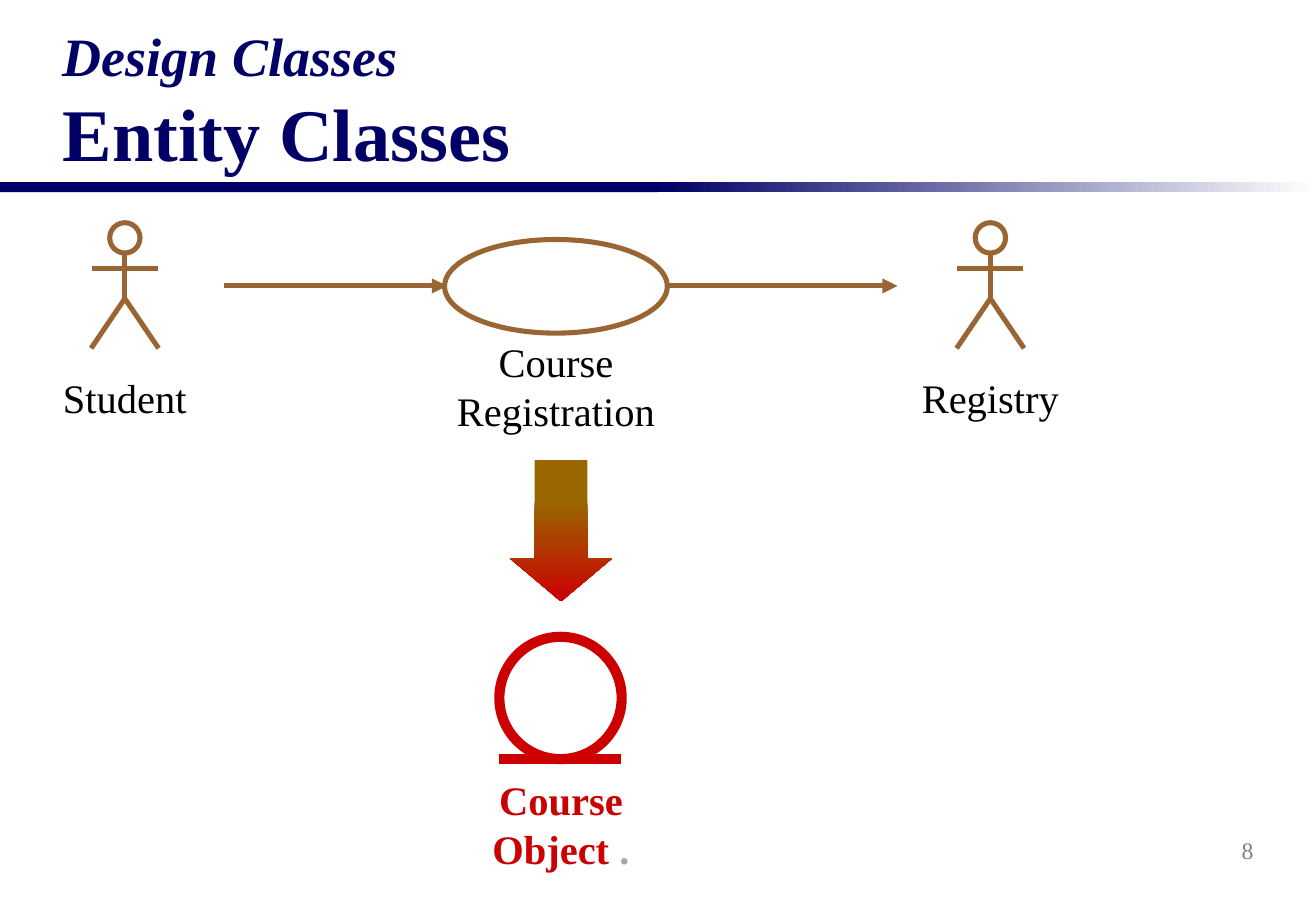
from lxml import etree
from pptx import Presentation
from pptx.dml.color import RGBColor
from pptx.enum import shapes, text
from pptx.oxml.ns import qn
from pptx.util import Pt

COLORS = {
    "navy": "000066",
    "white": "FFFFFF",
    "brown": "996633",
    "ochre": "996600",
    "red": "CC0000",
    "black": "000000",
    "gray": "808080",
    "silver": "A6A6A6",
}
FONT = "Times New Roman"


def rgb(name):
    return RGBColor.from_string(COLORS[name])


def style_run(r, size, color, bold=False, italic=False):
    r.font.name = FONT
    r.font.size = Pt(size)
    r.font.color.rgb = rgb(color)
    r.font.bold = bold
    r.font.italic = italic


def add_shape(s, kind, box, fill=None, line=None, width=3):
    sp = s.shapes.add_shape(kind, *map(Pt, box))
    sp.shadow.inherit = False
    if fill:
        sp.fill.solid()
        sp.fill.fore_color.rgb = rgb(fill)
    if line:
        sp.line.color.rgb = rgb(line)
        sp.line.width = Pt(width)
    else:
        sp.line.fill.background()
    return sp


def set_gradient(sp, stops, angle):
    sp.fill.gradient()
    sp.fill.gradient_angle = angle
    gs_list = sp.element.spPr.find(qn("a:gradFill")).find(qn("a:gsLst"))
    for gs in list(gs_list):
        gs_list.remove(gs)
    for percent, color in stops:
        gs = etree.SubElement(gs_list, qn("a:gs"), pos=str(percent * 1000))
        etree.SubElement(gs, qn("a:srgbClr"), val=COLORS[color])


def add_line(s, start, end, color="brown", width=3, arrow=False):
    c = s.shapes.add_connector(shapes.MSO_CONNECTOR.STRAIGHT, *map(Pt, start + end))
    c.line.color.rgb = rgb(color)
    c.line.width = Pt(width)
    if arrow:
        ln = c.element.spPr.find(qn("a:ln"))
        etree.SubElement(ln, qn("a:tailEnd"), type="triangle")
    etree.SubElement(c.element.spPr, qn("a:effectLst"))
    return c


def add_label(s, box, runs, size=24, bold=False, wrap=True,
              align=text.PP_ALIGN.CENTER, anchor=text.MSO_ANCHOR.TOP):
    tf = s.shapes.add_textbox(*map(Pt, box)).text_frame
    tf.word_wrap = wrap
    tf.vertical_anchor = anchor
    p = tf.paragraphs[0]
    p.alignment = align
    for words, color in runs:
        r = p.add_run()
        r.text = words
        style_run(r, size, color, bold)


def add_title(s):
    title = s.shapes.title
    title.left, title.top, title.width, title.height = map(Pt, (30, 24, 720, 84))
    tf = title.text_frame
    tf.text = "Design Classes\vEntity Classes"
    tf.word_wrap = True
    tf.auto_size = text.MSO_AUTO_SIZE.NONE
    tf.vertical_anchor = text.MSO_ANCHOR.BOTTOM
    p = tf.paragraphs[0]
    p.alignment = text.PP_ALIGN.LEFT
    style_run(p.runs[0], 32, "navy", bold=True, italic=True)
    style_run(p.runs[1], 44, "navy", bold=True)


def add_title_rule(s):
    rect = shapes.MSO_SHAPE.RECTANGLE
    add_shape(s, rect, (0, 108, 390, 6), "navy")
    fade = add_shape(s, rect, (390, 108, 390, 6))
    set_gradient(fade, [(0, "navy"), (100, "white")], 0)


def add_actor(s, x, name, label_box):
    add_shape(s, shapes.MSO_SHAPE.OVAL, (x - 9, 132, 18, 18), "white", "brown")
    add_line(s, (x - 19.5, 159), (x + 19.5, 159))
    add_line(s, (x, 150), (x, 177))
    for side in (-1, 1):
        add_line(s, (x, 177), (x + side * 20, 206.5))
    add_label(s, label_box, [(name, "black")], wrap=False)


def add_use_case(s):
    add_line(s, (388, 169.5), (532, 169.5), arrow=True)
    add_shape(s, shapes.MSO_SHAPE.OVAL, (263.5, 142, 132, 55.5), "white", "brown")
    add_line(s, (133, 169.5), (265, 169.5), arrow=True)
    add_label(s, (240, 196.5, 179, 65), [("Course Registration", "black")])


def add_down_arrow(s):
    sp = add_shape(s, shapes.MSO_SHAPE.DOWN_ARROW, (302.5, 272.5, 60, 84))
    sp.adjustments[0] = 0.52
    sp.adjustments[1] = 0.42
    set_gradient(sp, [(0, "ochre"), (30, "ochre"), (100, "red")], 270)


def add_entity(s):
    add_label(s, (263.5, 456, 138, 65.5),
              [("Course Object ", "red"), (".", "silver")], bold=True)
    add_shape(s, shapes.MSO_SHAPE.OVAL, (296, 377.5, 72.5, 72.5), "white", "red", 6)
    add_line(s, (296, 450), (368, 450), "red", 6)


def main():
    prs = Presentation()
    prs.slide_width, prs.slide_height = Pt(780), Pt(540)
    s = prs.slides.add_slide(prs.slide_layouts[5])
    add_title_rule(s)
    add_label(s, (587.5, 486, 162.5, 36), [("8", "gray")], 14, wrap=False,
              align=text.PP_ALIGN.RIGHT, anchor=text.MSO_ANCHOR.MIDDLE)
    add_title(s)
    add_use_case(s)
    add_actor(s, 74, "Student", (30, 217.5, 88, 36))
    add_actor(s, 587, "Registry", (539, 217.5, 96, 36))
    add_down_arrow(s)
    add_entity(s)
    prs.save("out.pptx")


if __name__ == "__main__":
    main()
